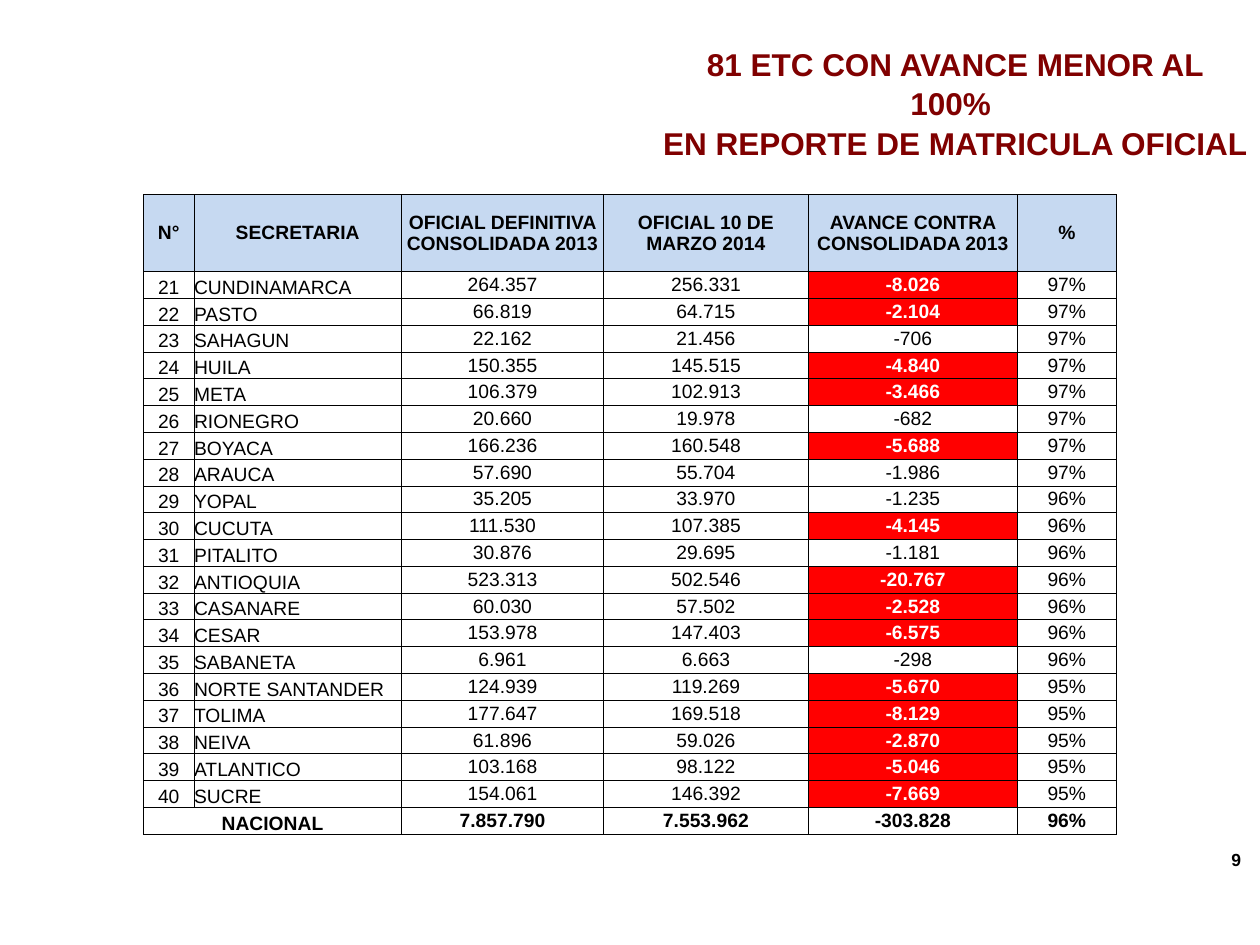
from lxml.etree import SubElement
from pptx import Presentation
from pptx.dml.color import RGBColor
from pptx.enum.text import MSO_ANCHOR as Anchor, MSO_AUTO_SIZE as AutoSize, PP_ALIGN as Align
from pptx.oxml.ns import qn
from pptx.util import Pt

BLACK = RGBColor(0x00, 0x00, 0x00)
WHITE = RGBColor(0xFF, 0xFF, 0xFF)
MAROON = RGBColor(0x80, 0x00, 0x00)
LIGHT_BLUE = RGBColor(0xC6, 0xD9, 0xF1)
RED = RGBColor(0xFF, 0x00, 0x00)

FONT = "Arial"
FIRST_NUMBER = 21
ALERT_LIMIT = -2000
HEADER_HEIGHT = 44
ROW_HEIGHT = 15.32
COLUMN_WIDTHS = [28.9, 118.6, 115.4, 117.1, 119.4, 56.6]

HEADERS = ["N°", "SECRETARIA", "OFICIAL DEFINITIVA CONSOLIDADA 2013",
           "OFICIAL 10 DE MARZO 2014", "AVANCE CONTRA CONSOLIDADA 2013", "%"]
DEPARTMENTS = [
    ("CUNDINAMARCA", "264.357", "256.331", "-8.026", "97%"),
    ("PASTO", "66.819", "64.715", "-2.104", "97%"),
    ("SAHAGUN", "22.162", "21.456", "-706", "97%"),
    ("HUILA", "150.355", "145.515", "-4.840", "97%"),
    ("META", "106.379", "102.913", "-3.466", "97%"),
    ("RIONEGRO", "20.660", "19.978", "-682", "97%"),
    ("BOYACA", "166.236", "160.548", "-5.688", "97%"),
    ("ARAUCA", "57.690", "55.704", "-1.986", "97%"),
    ("YOPAL", "35.205", "33.970", "-1.235", "96%"),
    ("CUCUTA", "111.530", "107.385", "-4.145", "96%"),
    ("PITALITO", "30.876", "29.695", "-1.181", "96%"),
    ("ANTIOQUIA", "523.313", "502.546", "-20.767", "96%"),
    ("CASANARE", "60.030", "57.502", "-2.528", "96%"),
    ("CESAR", "153.978", "147.403", "-6.575", "96%"),
    ("SABANETA", "6.961", "6.663", "-298", "96%"),
    ("NORTE SANTANDER", "124.939", "119.269", "-5.670", "95%"),
    ("TOLIMA", "177.647", "169.518", "-8.129", "95%"),
    ("NEIVA", "61.896", "59.026", "-2.870", "95%"),
    ("ATLANTICO", "103.168", "98.122", "-5.046", "95%"),
    ("SUCRE", "154.061", "146.392", "-7.669", "95%"),
]
TOTALS = ["NACIONAL", "", "7.857.790", "7.553.962", "-303.828", "96%"]


def format_paragraph(paragraph, size, color, bold, align):
    paragraph.alignment = align
    for run in paragraph.runs:
        run.font.name = FONT
        run.font.size = Pt(size)
        run.font.bold = bold
        run.font.color.rgb = color


def place(shape, left, top, width, height):
    shape.left, shape.top = Pt(left), Pt(top)
    shape.width, shape.height = Pt(width), Pt(height)


def add_title(slide):
    title = slide.shapes.title
    place(title, 371.5, 20.9, 348.5, 72.7)
    frame = title.text_frame
    frame.text = "81 ETC CON AVANCE MENOR AL 100% \nEN REPORTE DE MATRICULA OFICIAL "
    frame.word_wrap = True
    frame.auto_size = AutoSize.NONE
    frame.vertical_anchor = Anchor.TOP
    for paragraph in frame.paragraphs:
        paragraph.line_spacing = 1.05
        format_paragraph(paragraph, 18, MAROON, True, Align.CENTER)


def add_page_number(slide):
    box = slide.shapes.add_textbox(Pt(696.2), Pt(485.3), Pt(15.8), Pt(12.2))
    frame = box.text_frame
    frame.margin_left = frame.margin_right = frame.margin_top = frame.margin_bottom = 0
    frame.word_wrap = True
    frame.vertical_anchor = Anchor.MIDDLE
    frame.text = "9 "
    format_paragraph(frame.paragraphs[0], 10, BLACK, True, Align.RIGHT)


def add_borders(cell):
    properties = cell._tc.get_or_add_tcPr()
    for side in ("a:lnL", "a:lnR", "a:lnT", "a:lnB"):
        line = SubElement(properties, qn(side), w=str(Pt(0.5)))
        fill = SubElement(line, qn("a:solidFill"))
        SubElement(fill, qn("a:srgbClr"), val=str(BLACK))


def fill_cell(cell, text, fill=None, color=BLACK, bold=False,
              align=Align.CENTER, anchor=Anchor.MIDDLE):
    add_borders(cell)
    if fill is None:
        cell.fill.background()
    else:
        cell.fill.solid()
        cell.fill.fore_color.rgb = fill
    cell.margin_left = cell.margin_right = cell.margin_top = cell.margin_bottom = 0
    cell.vertical_anchor = anchor
    cell.text_frame.text = text
    format_paragraph(cell.text_frame.paragraphs[0], 11, color, bold, align)


def department_style(column, text):
    """Red marks a shortfall beyond the limit; number and name sit at the cell bottom."""
    if column == 0:
        return {"anchor": Anchor.BOTTOM}
    if column == 1:
        return {"anchor": Anchor.BOTTOM, "align": Align.LEFT}
    if column == 4 and int(text.replace(".", "")) <= ALERT_LIMIT:
        return {"fill": RED, "color": WHITE, "bold": True}
    return {}


def add_enrolment_table(slide):
    row_count = len(DEPARTMENTS) + 2
    height = HEADER_HEIGHT + ROW_HEIGHT * (row_count - 1)
    table = slide.shapes.add_table(row_count, len(HEADERS), Pt(82), Pt(111.2),
                                   Pt(sum(COLUMN_WIDTHS)), Pt(height)).table
    table.first_row = table.horz_banding = False
    for column, width in zip(table.columns, COLUMN_WIDTHS):
        column.width = Pt(width)
    for index, row in enumerate(table.rows):
        row.height = Pt(ROW_HEIGHT if index else HEADER_HEIGHT)

    for column, text in enumerate(HEADERS):
        fill_cell(table.cell(0, column), text, fill=LIGHT_BLUE, bold=True)
    for index, department in enumerate(DEPARTMENTS):
        for column, text in enumerate((str(FIRST_NUMBER + index), *department)):
            fill_cell(table.cell(index + 1, column), text, **department_style(column, text))
    last = row_count - 1
    for column, text in enumerate(TOTALS):
        anchor = Anchor.MIDDLE if column else Anchor.BOTTOM
        fill_cell(table.cell(last, column), text, bold=True, anchor=anchor)
    table.cell(last, 0).merge(table.cell(last, 1))


def main():
    presentation = Presentation()
    presentation.slide_width, presentation.slide_height = Pt(720), Pt(540)
    slide = presentation.slides.add_slide(presentation.slide_layouts[5])
    add_page_number(slide)
    add_title(slide)
    add_enrolment_table(slide)
    presentation.save("out.pptx")


if __name__ == "__main__":
    main()
